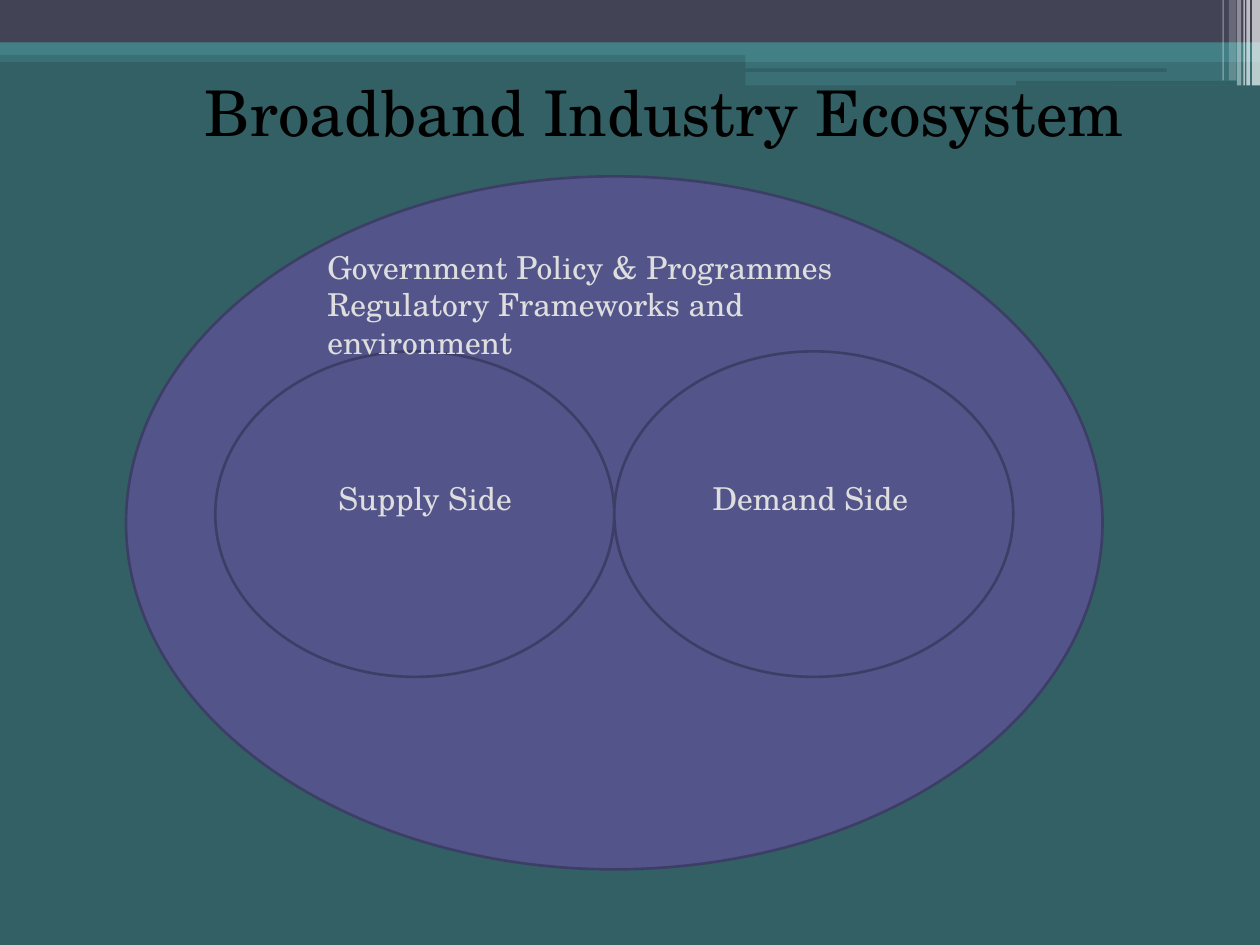
from pptx import Presentation
from pptx import util as u
from pptx.dml.color import RGBColor
from pptx.enum import shapes, text
from pptx.oxml import ns
from lxml import etree

COLORS = {
    "background": "326065",
    "slate": "424456",
    "teal": "438086",
    "white": "FFFFFF",
    "violet": "53548A",
    "outline": "3D3E66",
    "label": "DEDEDE",
    "title": "000000",
}
FONT = "TeX Gyre Schola"
KINDS = shapes.MSO_SHAPE


def add_filled(kind, left, top, width, height, color, opacity=100, outline=None):
    shape = slide.shapes.add_shape(kind, u.Pt(left), u.Pt(top), u.Pt(width), u.Pt(height))
    shape.shadow.inherit = False
    shape.fill.solid()
    shape.fill.fore_color.rgb = RGBColor.from_string(COLORS[color])
    if opacity < 100:
        color_element = shape.fill._xPr.find(".//" + ns.qn("a:srgbClr"))
        etree.SubElement(color_element, ns.qn("a:alpha"), val=str(opacity * 1000))
    if outline:
        shape.line.color.rgb = RGBColor.from_string(COLORS[outline])
        shape.line.width = u.Pt(1.5)
    else:
        shape.line.fill.background()


def add_text(content, left, top, width, height, size=18, color="label"):
    box = slide.shapes.add_textbox(u.Pt(left), u.Pt(top), u.Pt(width), u.Pt(height))
    frame = box.text_frame
    frame.word_wrap = True
    frame.auto_size = text.MSO_AUTO_SIZE.SHAPE_TO_FIT_TEXT
    frame.text = content
    for paragraph in frame.paragraphs:
        paragraph.font.name = FONT
        paragraph.font.size = u.Pt(size)
        paragraph.font.color.rgb = RGBColor.from_string(COLORS[color])


presentation = Presentation()
presentation.slide_width, presentation.slide_height = u.Pt(720), u.Pt(540)
slide = presentation.slides.add_slide(presentation.slide_layouts[6])
slide.background.fill.solid()
slide.background.fill.fore_color.rgb = RGBColor.from_string(COLORS["background"])

# Header bands: left, top, width, height, color, opacity
for band in [
    (0, 28.8, 720, 6.6, "teal", 50),
    (0, 0, 720, 24.4, "slate", 100),
    (0, 24.2, 720, 7.2, "teal", 100),
    (426, 28.2, 294, 7.2, "teal", 100),
    (426, 34.6, 294, 14.2, "teal", 50),
]:
    add_filled(KINDS.RECTANGLE, *band)

# Thin rounded bars in the header
for left, top, width, height in [(425.5, 39.1, 241.2, 2), (580.5, 46.3, 126, 2.6)]:
    add_filled(KINDS.ROUNDED_RECTANGLE, left, top, width, height, "background")

# Translucent stripes at the top right: left, width, height, opacity
for left, width, height, opacity in [
    (715.5, 4.5, 48.8, 65),
    (712.2, 2, 48.8, 65),
    (710.6, 0.8, 48.8, 60),
    (707, 2.2, 48.8, 40),
    (702.2, 4.4, 46, 20),
    (698.6, 0.8, 46, 30),
]:
    add_filled(KINDS.RECTANGLE, left, 0, width, height, "white", opacity)

# Ecosystem ellipse with two touching sides inside
add_filled(KINDS.OVAL, 72, 100.8, 558, 396, "violet", outline="outline")
side_width = 228
for index in range(2):
    left = 351 + (index - 1) * side_width
    add_filled(KINDS.OVAL, left, 200.8, side_width, 186, "violet", outline="outline")

# Labels
add_text("Government Policy & Programmes\nRegulatory Frameworks and environment",
         180, 138, 354, 51)
add_text("Supply Side", 186.3, 270, 150, 29)
add_text("Demand Side", 400.2, 270, 150, 29)

# Title
add_text("Broadband Industry Ecosystem", 110, 38.2, 550, 51, size=36, color="title")

presentation.save("out.pptx")
